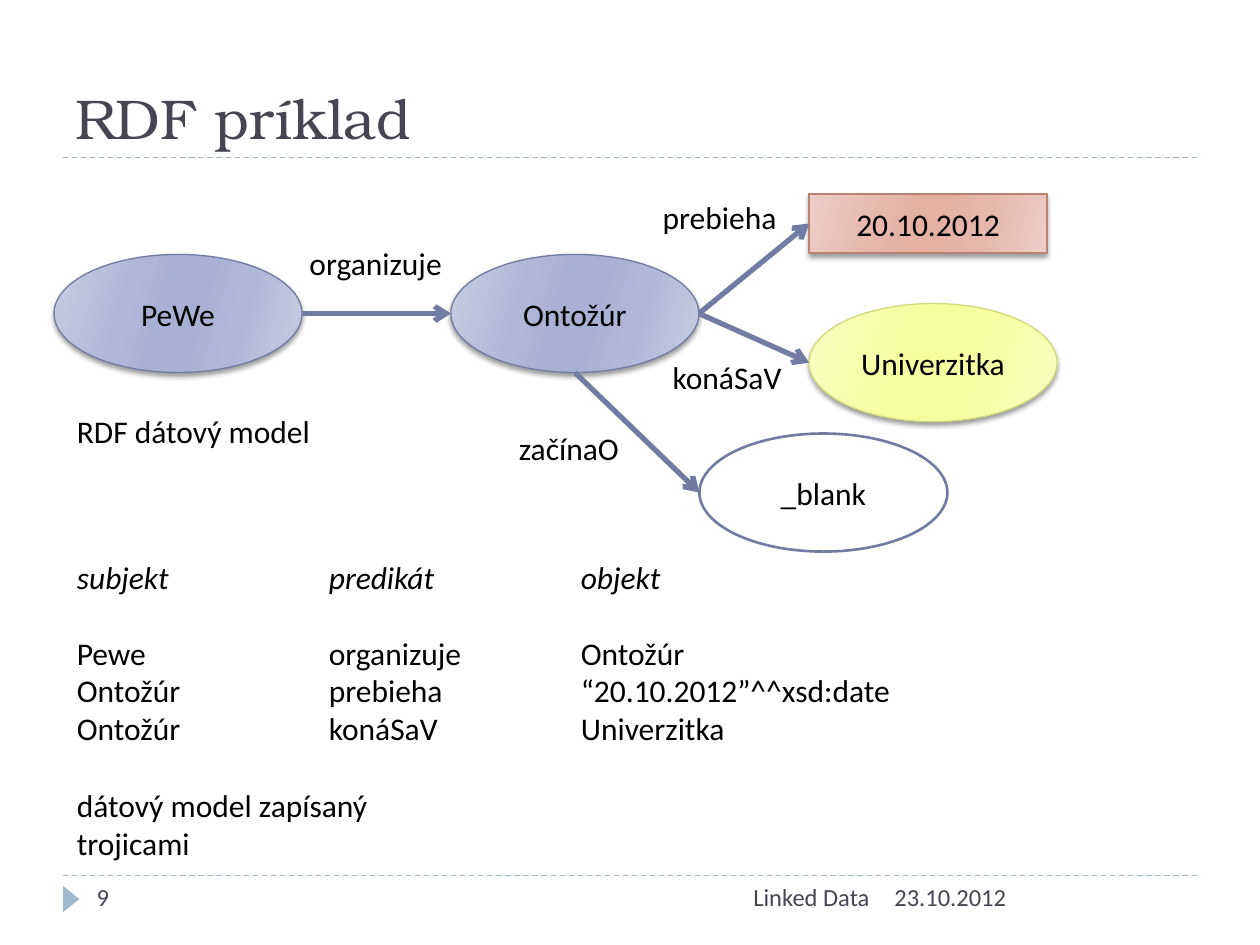
from dataclasses import dataclass

from lxml.etree import SubElement
from pptx import Presentation
from pptx.dml.color import RGBColor
from pptx.enum.dml import MSO_LINE
from pptx.enum.shapes import MSO_CONNECTOR, MSO_SHAPE
from pptx.enum.text import MSO_ANCHOR, PP_ALIGN
from pptx.oxml.ns import qn
from pptx.util import Cm, Pt


@dataclass(frozen=True)
class Theme:
    title_font: str = "TeX Gyre Bonum"
    body_font: str = "Calibri"
    title_size: int = 32
    body_size: int = 18
    footer_size: int = 14
    heading: str = "464653"
    text: str = "000000"
    rule: str = "9FB8CD"
    edge: str = "727CA3"
    white: str = "FFFFFF"
    # Outline, then gradient colours from the rim to the middle
    blue: tuple = ("727CA3", "C9CDE2", "B1B7D7", "A8B0D3")
    yellow: tuple = ("D2DA7A", "F8FEC2", "F6FFA7", "F6FF9F")
    red: tuple = ("B88472", "ECCEC6", "E6B8AC", "E4B1A3")


def rgb(color):
    return RGBColor.from_string(color)


class SlideBuilder:
    def __init__(self, slide, theme):
        self.slide = slide
        self.theme = theme

    def style(self, paragraph, size=None, color=None, font=None, italic=False):
        paragraph.font.name = font or self.theme.body_font
        paragraph.font.size = Pt(size or self.theme.body_size)
        paragraph.font.color.rgb = rgb(color or self.theme.text)
        paragraph.font.italic = italic

    def title(self, text, left, top, width, height):
        shape = self.slide.shapes.title
        shape.left, shape.top, shape.width, shape.height = map(Cm, (left, top, width, height))
        shape.text_frame.text = text
        shape.text_frame.vertical_anchor = MSO_ANCHOR.BOTTOM
        paragraph = shape.text_frame.paragraphs[0]
        paragraph.alignment = PP_ALIGN.LEFT
        self.style(paragraph, self.theme.title_size, self.theme.heading, self.theme.title_font)

    def text(self, text, left, top, width, height=1.02, align=PP_ALIGN.LEFT, wrap=True, **style):
        box = self.slide.shapes.add_textbox(Cm(left), Cm(top), Cm(width), Cm(height))
        box.text_frame.word_wrap = wrap
        box.text_frame.text = text
        paragraph = box.text_frame.paragraphs[0]
        paragraph.alignment = align
        self.style(paragraph, **style)

    def triples(self, rows, left, top, width, height, column):
        """Rows in columns set by tab stops; the first row is the heading."""
        box = self.slide.shapes.add_textbox(Cm(left), Cm(top), Cm(width), Cm(height))
        frame = box.text_frame
        frame.word_wrap = True
        for index, row in enumerate(rows):
            paragraph = frame.add_paragraph() if index else frame.paragraphs[0]
            paragraph.text = "\t".join(row)
            paragraph.space_after = Pt(0 if index else 21.5)
            stops = SubElement(paragraph._p.get_or_add_pPr(), qn("a:tabLst"))
            for number in range(1, len(row)):
                SubElement(stops, qn("a:tab"), pos=str(Cm(column * number)), algn="l")
            self.style(paragraph, italic=index == 0)

    def node(self, text, left, top, colors=None, kind=MSO_SHAPE.OVAL, width=5, height=2.38):
        shape = self.slide.shapes.add_shape(kind, Cm(left), Cm(top), Cm(width), Cm(height))
        shape.shadow.inherit = False
        if colors:
            outline, *gradient = colors
            self.gradient(shape, gradient)
            self.shadow(shape)
        else:
            outline = self.theme.edge
            shape.fill.solid()
            shape.fill.fore_color.rgb = rgb(self.theme.white)
        shape.line.color.rgb = rgb(outline)
        shape.line.width = Pt(0.75 if colors else 1.5)
        shape.text_frame.text = text
        shape.text_frame.vertical_anchor = MSO_ANCHOR.MIDDLE
        paragraph = shape.text_frame.paragraphs[0]
        paragraph.alignment = PP_ALIGN.CENTER
        self.style(paragraph)
        return shape

    def gradient(self, shape, colors):
        shape.fill.gradient()
        shape.fill.gradient_angle = 344
        stops = shape._element.spPr.find(".//" + qn("a:gsLst"))
        for stop in list(stops):
            stops.remove(stop)
        for percent, color in zip((0, 30, 45, 55, 73, 100), [*colors, *reversed(colors)]):
            stop = SubElement(stops, qn("a:gs"), pos=str(percent * 1000))
            SubElement(stop, qn("a:srgbClr"), val=color)

    def shadow(self, shape):
        effects = shape._element.spPr.find(qn("a:effectLst"))
        outer = SubElement(effects, qn("a:outerShdw"), blurRad=str(Pt(3)), dist=str(Pt(2)),
                           dir="5400000", rotWithShape="0")
        color = SubElement(outer, qn("a:srgbClr"), val=self.theme.text)
        SubElement(color, qn("a:alpha"), val="40000")

    def line(self, start, end, color, width):
        connector = self.slide.shapes.add_connector(MSO_CONNECTOR.STRAIGHT, *start, *end)
        connector.line.color.rgb = rgb(color)
        connector.line.width = Pt(width)
        SubElement(connector._element.spPr, qn("a:effectLst"))
        return connector

    def rule(self, y):
        connector = self.line((Cm(1.27), Cm(y)), (Cm(24.13), Cm(y)), self.theme.rule, 0.75)
        connector.line.dash_style = MSO_LINE.DASH

    def arrow(self, start, end):
        connector = self.line(start, end, self.theme.edge, 3)
        SubElement(connector.line._get_or_add_ln(), qn("a:tailEnd"), type="arrow")
        return connector

    def marker(self, left, top, width, height):
        shape = self.slide.shapes.add_shape(
            MSO_SHAPE.ISOSCELES_TRIANGLE, Cm(left), Cm(top), Cm(width), Cm(height))
        shape.rotation = 90
        shape.shadow.inherit = False
        shape.fill.solid()
        shape.fill.fore_color.rgb = rgb(self.theme.rule)
        shape.line.fill.background()


def left_of(shape):
    return shape.left, shape.top + shape.height // 2


def right_of(shape):
    return shape.left + shape.width, shape.top + shape.height // 2


def bottom_of(shape):
    return shape.left + shape.width // 2, shape.top + shape.height


def main():
    presentation = Presentation()
    presentation.slide_width, presentation.slide_height = Cm(25.4), Cm(19.05)
    theme = Theme()
    builder = SlideBuilder(presentation.slides.add_slide(presentation.slide_layouts[5]), theme)

    # Title, rules and footer
    footer_top = 17.65
    footer = {"size": theme.footer_size, "color": theme.heading}
    builder.rule(footer_top)
    builder.rule(3.18)
    builder.marker(1.17, 17.96, 0.53, 0.33)
    builder.title("RDF príklad", 1.27, 0.43, 22.86, 2.74)
    builder.text("23.10.2012", 17.78, footer_top, 6.35, **footer)
    builder.text("Linked Data", 8.05, footer_top, 9.73, align=PP_ALIGN.RIGHT, **footer)
    builder.text("9", 1.7, footer_top, 5.51, **footer)

    # Graph nodes
    university = builder.node("Univerzitka", 16.31, 6.12, theme.yellow)
    group = builder.node("PeWe", 1.09, 5.13, theme.blue)
    event = builder.node("Ontožúr", 9.09, 5.13, theme.blue)
    date = builder.node("20.10.2012", 16.31, 3.91, theme.red, MSO_SHAPE.RECTANGLE, 4.8, 1.19)
    blank = builder.node("_blank", 14.1, 8.74)

    # Graph edges
    builder.arrow(right_of(group), left_of(event))
    builder.arrow(right_of(event), left_of(date)).end_connect(date, 1)
    builder.arrow(right_of(event), left_of(university))
    builder.arrow(bottom_of(event), left_of(blank))

    # Edge labels, each kept on one line
    for label, left, top, width in (
        ("organizuje", 5.99, 4.8, 3.2),
        ("prebieha", 13.11, 3.86, 3),
        ("konáSaV", 13.31, 7.09, 2.75),
        ("začínaO", 10.21, 8.53, 2.69),
    ):
        builder.text(label, left, top, width, wrap=False)

    # Triples and captions
    text_left = 1.3
    builder.text("RDF dátový model", text_left, 8.18, 6.3)
    builder.triples([
        ("subjekt", "predikát", "objekt"),
        ("Pewe", "organizuje", "Ontožúr"),
        ("Ontožúr", "prebieha", "“20.10.2012”^^xsd:date"),
        ("Ontožúr", "konáSaV", "Univerzitka"),
    ], text_left, 11.13, 17.5, 4.11, column=5.08)
    builder.text("dátový model zapísaný trojicami", text_left, 15.72, 8.76)

    presentation.save("out.pptx")


if __name__ == "__main__":
    main()
